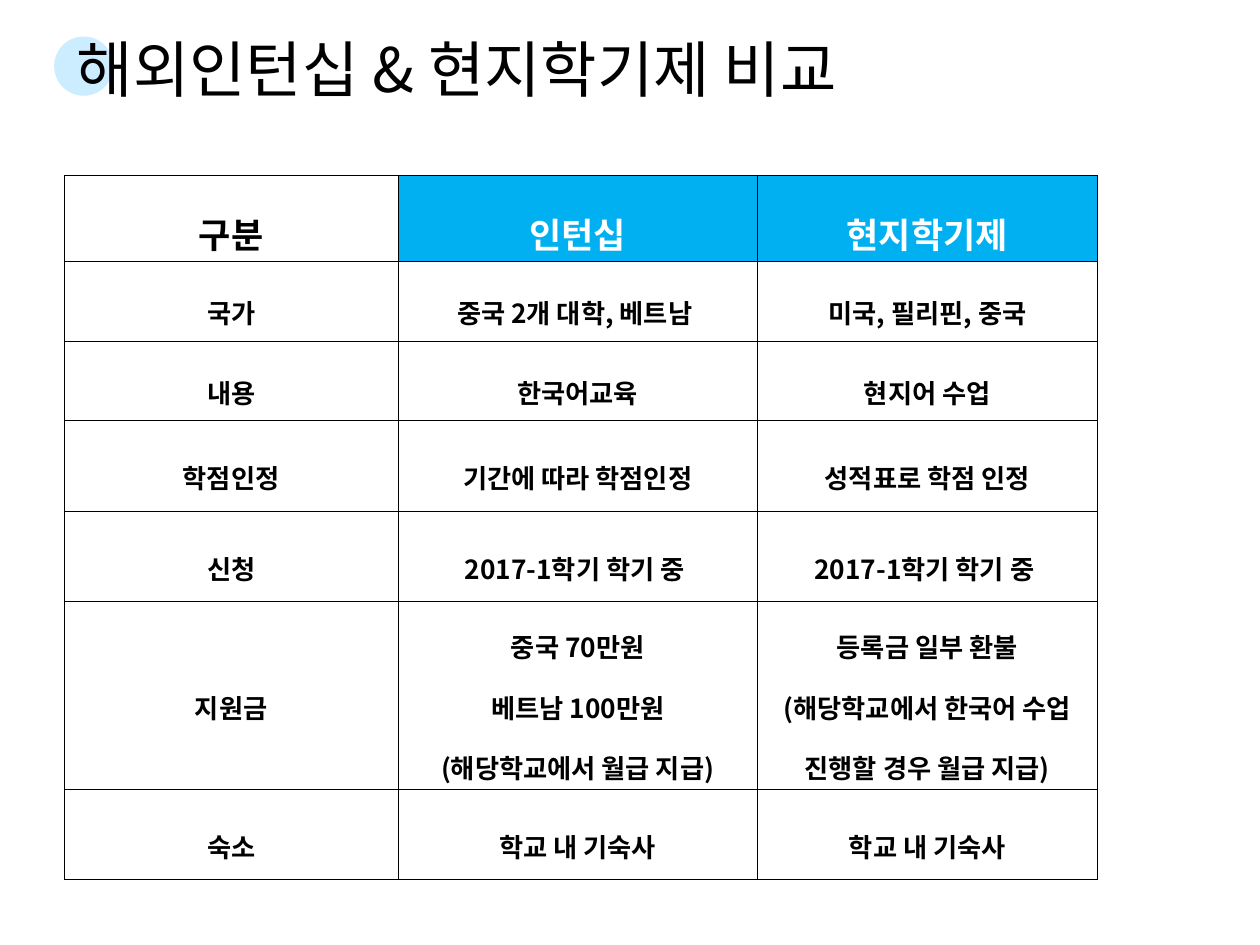
"""Build a slide comparing overseas internships with local semesters."""
from lxml import etree
from pptx import Presentation
from pptx.dml.color import RGBColor
from pptx.enum.shapes import MSO_SHAPE
from pptx.enum.text import MSO_ANCHOR, MSO_AUTO_SIZE, PP_ALIGN
from pptx.oxml.ns import qn
from pptx.util import Inches, Pt

OVAL = MSO_SHAPE.OVAL
MIDDLE, BOTTOM = MSO_ANCHOR.MIDDLE, MSO_ANCHOR.BOTTOM
LEFT, CENTER = PP_ALIGN.LEFT, PP_ALIGN.CENTER
NO_FIT = MSO_AUTO_SIZE.NONE
BLACK = RGBColor(0, 0, 0)
WHITE = RGBColor(255, 255, 255)
BLUE = RGBColor(0, 0xB0, 0xF0)
PALE = RGBColor(0xCC, 0xEC, 0xFF)
FONT = "Noto Sans CJK KR"

TITLE = "해외인턴십 & 현지학기제 비교"
ROWS = [
    ("구분", "인턴십", "현지학기제"),
    ("국가", "중국 2개 대학, 베트남 ", "미국, 필리핀, 중국"),
    ("내용", "한국어교육", "현지어 수업"),
    ("학점인정", "기간에 따라 학점인정", "성적표로 학점 인정"),
    ("신청", "2017-1학기 학기 중 ", "2017-1학기 학기 중 "),
    ("지원금", "중국 70만원\n베트남 100만원\n(해당학교에서 월급 지급)",
     "등록금 일부 환불\n(해당학교에서 한국어 수업 진행할 경우 월급 지급)"),
    ("숙소", "학교 내 기숙사", "학교 내 기숙사"),
]
WIDTHS = [2.65, 2.85, 2.7]
HEIGHTS = [0.48, 0.63, 0.63, 0.72, 0.72, 0.91, 0.72]


def write(frame, text, size, color=BLACK, bold=False, align=LEFT, spacing=1.0):
    frame.text = text
    for para in frame.paragraphs:
        para.alignment = align
        para.line_spacing = spacing
        for run in para.runs:
            font = run.font
            font.name, font.size, font.bold = FONT, Pt(size), bold
            font.color.rgb = color
            props = run._r.get_or_add_rPr()
            etree.SubElement(props, qn("a:ea")).set("typeface", FONT)


def add_edges(cell):
    props = cell._tc.get_or_add_tcPr()
    for side in ("lnL", "lnR", "lnT", "lnB"):
        line = etree.SubElement(props, qn(f"a:{side}"), w=str(Pt(0.28)))
        fill = etree.SubElement(line, qn("a:solidFill"))
        etree.SubElement(fill, qn("a:srgbClr"), val=str(BLACK))


def add_title(slide):
    dot = slide.shapes.add_shape(
        OVAL, Inches(0.43), Inches(0.29), Inches(0.47), Inches(0.47))
    dot.shadow.inherit = False
    dot.fill.solid()
    dot.fill.fore_color.rgb = PALE
    dot.line.fill.background()
    title = slide.shapes.title
    title.element.addprevious(dot.element)
    title.left, title.top = Inches(0.51), Inches(0.39)
    title.width, title.height = Inches(7.32), Inches(0.54)
    frame = title.text_frame
    frame.auto_size = NO_FIT
    frame.word_wrap = True
    frame.vertical_anchor = BOTTOM
    frame.margin_left = frame.margin_right = frame.margin_bottom = Inches(0.1)
    frame.margin_top = Inches(0.05)
    write(frame, TITLE, 35)


def add_grid(slide):
    table = slide.shapes.add_table(
        len(ROWS), len(WIDTHS), Inches(0.51), Inches(1.39),
        Inches(sum(WIDTHS)), Inches(sum(HEIGHTS))).table
    table.horz_banding = False
    for col, width in zip(table.columns, WIDTHS):
        col.width = Inches(width)
    for r, (texts, height) in enumerate(zip(ROWS, HEIGHTS)):
        table.rows[r].height = Inches(height)
        for c, text in enumerate(texts):
            cell = table.cell(r, c)
            accent = r == 0 and c > 0
            add_edges(cell)
            cell.fill.solid()
            cell.fill.fore_color.rgb = BLUE if accent else WHITE
            cell.vertical_anchor = MIDDLE
            cell.margin_left = cell.margin_right = Inches(0.07)
            cell.margin_top = cell.margin_bottom = Inches(0.02)
            write(cell.text_frame, text, 15 if r else 20, bold=True,
                  color=WHITE if accent else BLACK, align=CENTER, spacing=1.6)


def main():
    deck = Presentation()
    deck.slide_width, deck.slide_height = Inches(10), Inches(7.5)
    slide = deck.slides.add_slide(deck.slide_layouts[5])
    add_title(slide)
    add_grid(slide)
    deck.save("out.pptx")


if __name__ == "__main__":
    main()
